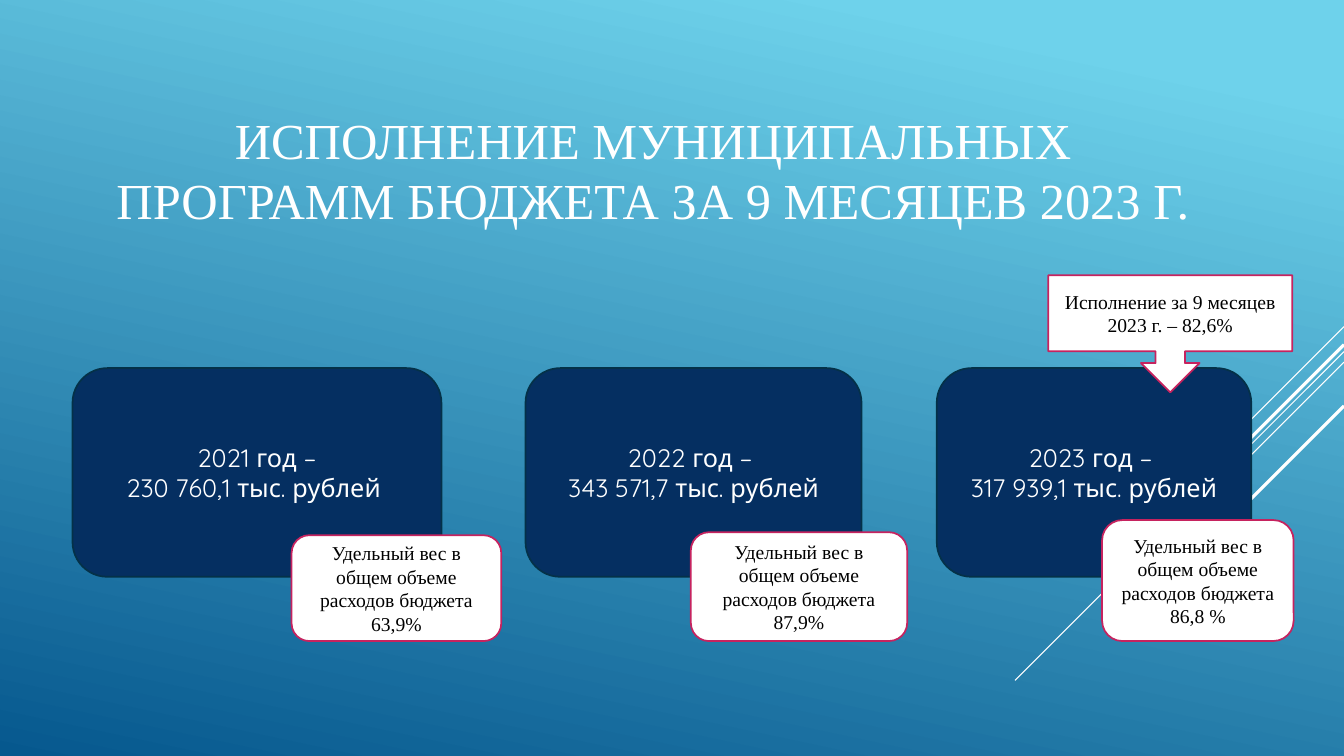
from lxml.etree import SubElement
from pptx import Presentation
from pptx.dml.color import RGBColor
from pptx.enum.shapes import MSO_CONNECTOR as Connector, MSO_SHAPE as Shape
from pptx.enum.text import MSO_ANCHOR as Anchor, PP_ALIGN as Align
from pptx.oxml.ns import qn
from pptx.util import Inches, Pt

WIDTH, HEIGHT = 13.33, 7.5
WHITE, BLACK, NAVY, NAVY_EDGE, CRIMSON = "FFFFFF", "000000", "052F61", "043148", "C6235F"
SERIF, ROUNDED = "Times New Roman", "Quicksand"


def color(value):
    return RGBColor.from_string(value)


def column(share):
    return Inches(WIDTH * share / 100)


def row(share):
    return Inches(HEIGHT * share / 100)


class BudgetSlide:
    def __init__(self, presentation):
        self.slide = presentation.slides.add_slide(presentation.slide_layouts[6])
        self.shapes = self.slide.shapes

    def background(self, stops, angle):
        fill = self.slide.background.fill
        fill.gradient()
        fill.gradient_angle = angle
        for stop, (position, value) in zip(fill.gradient_stops, stops):
            stop.position = position
            stop.color.rgb = color(value)

    def ray(self, top, length, weight):
        left = 100 - length * HEIGHT / WIDTH
        line = self.shapes.add_connector(
            Connector.STRAIGHT, column(100), row(top), column(left), row(top + length))
        line.line.color.rgb = color(WHITE)
        line.line.width = Pt(weight)
        SubElement(line._element.spPr, qn("a:effectLst"))

    def add_lines(self, shape, lines, font, size, ink):
        frame = shape.text_frame
        frame.word_wrap = True
        frame.vertical_anchor = Anchor.MIDDLE
        for index, text in enumerate(lines):
            paragraph = frame.add_paragraph() if index else frame.paragraphs[0]
            paragraph.alignment = Align.CENTER
            run = paragraph.add_run()
            run.text = text
            run.font.name = font
            run.font.size = Pt(size)
            run.font.color.rgb = color(ink)
        return frame

    def title(self, text, left, top, width, height):
        box = self.shapes.add_textbox(column(left), row(top), column(width), row(height))
        frame = self.add_lines(box, [text], SERIF, 36, WHITE)
        frame.vertical_anchor = Anchor.BOTTOM
        frame.margin_bottom = row(8.4)

    def panel(self, kind, area, fill, edge):
        left, top, width, height = area
        shape = self.shapes.add_shape(kind, column(left), row(top), column(width), row(height))
        shape.shadow.inherit = False
        shape.fill.solid()
        shape.fill.fore_color.rgb = color(fill)
        shape.line.color.rgb = color(edge)
        shape.line.width = Pt(1.25)
        return shape

    def year_card(self, left, width, lines):
        card = self.panel(Shape.ROUNDED_RECTANGLE, (left, 48.7, width, 27.6), NAVY, NAVY_EDGE)
        self.add_lines(card, lines, ROUNDED, 18, WHITE)

    def note(self, kind, area, text):
        self.add_lines(self.panel(kind, area, WHITE, CRIMSON), [text], SERIF, 14, BLACK)


def main():
    presentation = Presentation()
    presentation.slide_width = Inches(WIDTH)
    presentation.slide_height = Inches(HEIGHT)
    page = BudgetSlide(presentation)
    page.background([(0.1, "6ED2EB"), (1, "06588E")], 258)

    for top, length, weight in [(43.2, 13.3, 0.75), (46.5, 43.5, 0.75), (47.9, 27.6, 0.75),
                                (45.6, 25.5, 2.25), (53.7, 18.5, 2.25)]:
        page.ray(top, length, weight)

    page.title("ИСПОЛНЕНИЕ МУНИЦИПАЛЬНЫХ ПРОГРАММ БЮДЖЕТА ЗА 9 МЕСЯЦЕВ 2023 Г.",
               7.1, 11.6, 83, 27.2)

    page.year_card(5.4, 27.45, ["2021 год –", "230 760,1 тыс. рублей "])
    page.year_card(39.1, 25, ["2022 год – ", "343 571,7 тыс. рублей"])
    page.year_card(69.7, 23.4, ["2023 год – ", "317 939,1 тыс. рублей"])

    notes_bottom = 84.8
    for left, top, width, weight in [(21.7, 70.8, 15.6, "63,9%"), (51.4, 70.4, 16.1, "87,9%"),
                                     (82, 68.8, 14.25, "86,8 %")]:
        page.note(Shape.ROUNDED_RECTANGLE, (left, top, width, notes_bottom - top),
                  f"Удельный вес в общем объеме расходов бюджета {weight}")

    page.note(Shape.DOWN_ARROW_CALLOUT, (78, 36.4, 18.15, 15.5),
              "Исполнение за 9 месяцев 2023 г. – 82,6%")
    presentation.save("out.pptx")


if __name__ == "__main__":
    main()
